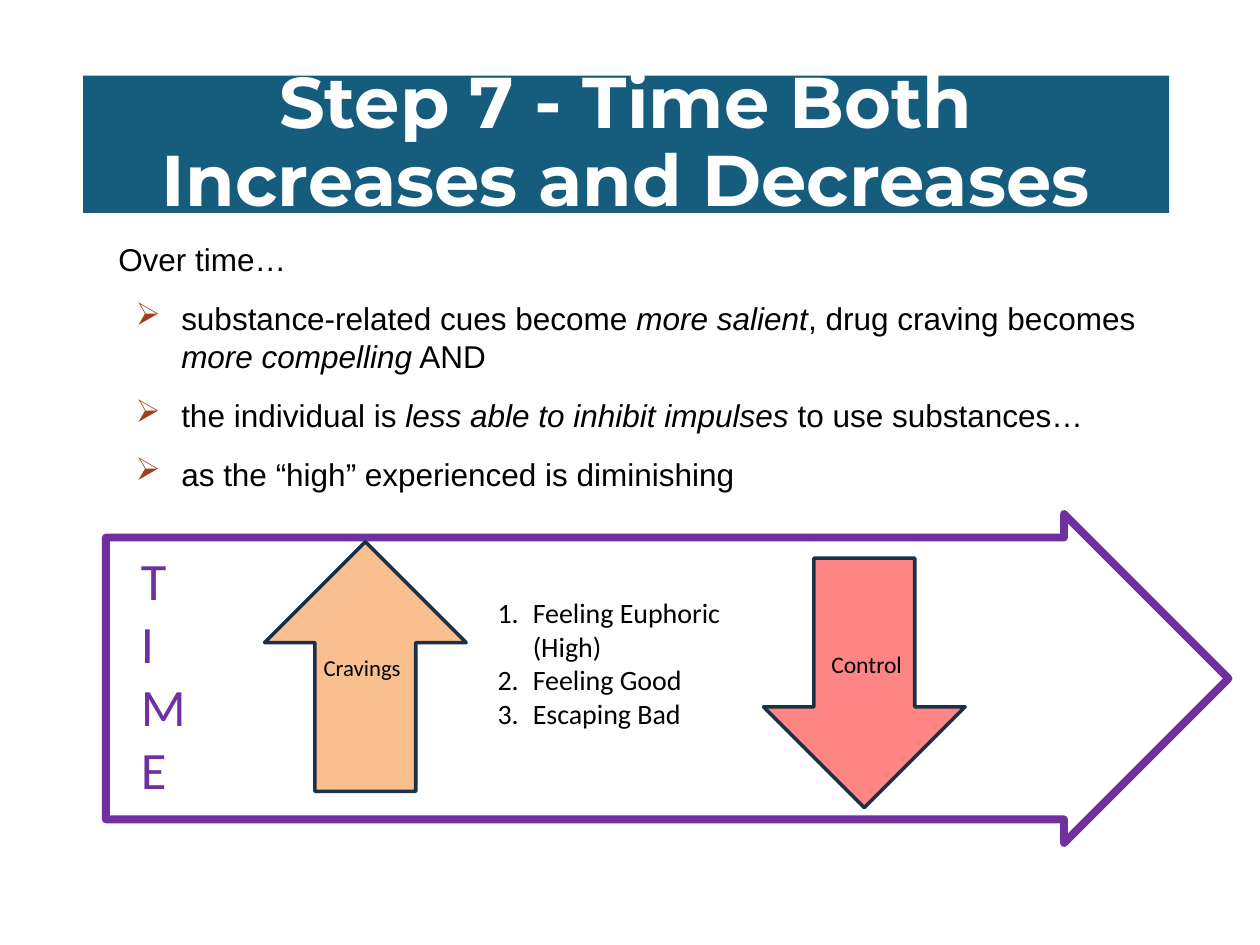
from lxml.etree import SubElement
from pptx import Presentation
from pptx.dml.color import RGBColor
from pptx.enum.shapes import MSO_SHAPE
from pptx.enum.text import MSO_ANCHOR, PP_ALIGN
from pptx.oxml.ns import qn
from pptx.util import Inches, Pt

TITLE = "Step 7 - Time Both Increases and Decreases"
INTRO = [("Over time…", False)]
POINTS = [
    [("substance-related cues become ", False), ("more salient", True),
     (", drug craving becomes ", False), ("more compelling", True), (" AND", False)],
    [("the individual is ", False), ("less able to inhibit impulses ", True),
     ("to use substances…", False)],
    [("as the “high” experienced is diminishing", False)],
]
REASONS = [[(reason, False)] for reason in
           ("Feeling Euphoric (High)", "Feeling Good", "Escaping Bad")]
TREND_SIZE = (1.6, 1.98)
TRENDS = [
    ("Cravings", (2.1, 4.3), 0, "FABF8E", (2.47, 5.14, 0.82, 0.32), 13),
    ("Control", (6.06, 4.43), 180, "FF8585", (6.5, 5.11, 0.86, 0.33), 13.5),
]
PURPLE, NAVY, TEAL, RUST = "7030A0", "193048", "165C7D", "A13F1D"
BLACK, WHITE = "000000", "FFFFFF"


def rgb(value):
    """Turn a hex string into a colour."""
    return RGBColor.from_string(value)


def add_block(slide, kind, box, fill=None, line=None, width=0):
    """Add a preset shape with a plain fill and outline."""
    block = slide.shapes.add_shape(kind, *map(Inches, box))
    block.shadow.inherit = False
    if fill:
        block.fill.solid()
        block.fill.fore_color.rgb = rgb(fill)
    else:
        block.fill.background()
    if line:
        block.line.color.rgb = rgb(line)
        block.line.width = Pt(width)
    else:
        block.line.fill.background()
    return block


def add_bullet(paragraph, indent, hanging, color, font, tag, **mark):
    """Give a paragraph a hanging bullet or number."""
    properties = paragraph._p.get_or_add_pPr()
    properties.set("marL", str(Inches(indent)))
    properties.set("indent", str(-Inches(hanging)))
    SubElement(SubElement(properties, qn("a:buClr")), qn("a:srgbClr"), val=color)
    SubElement(properties, qn("a:buFont"), typeface=font)
    SubElement(properties, qn(tag), **mark)


def write(paragraph, runs, size, font, color):
    """Fill a paragraph with runs in one font."""
    for words, italic in runs:
        run = paragraph.add_run()
        run.text = words
        if italic:
            run.font.italic = True
    paragraph.font.size = Pt(size)
    paragraph.font.name = font
    paragraph.font.color.rgb = rgb(color)


def add_text(slide, box):
    """Add a wrapping text box and return its frame."""
    frame = slide.shapes.add_textbox(*map(Inches, box)).text_frame
    frame.word_wrap = True
    return frame


def add_paragraphs(frame, count):
    """Return the given number of paragraphs of an empty frame."""
    return [frame.paragraphs[0]] + [frame.add_paragraph() for _ in range(count - 1)]


def add_title(slide):
    """Add the title band."""
    band = add_block(slide, MSO_SHAPE.RECTANGLE, (0.66, 0.6, 8.62, 1.09), TEAL)
    band.text_frame.word_wrap = True
    band.text_frame.vertical_anchor = MSO_ANCHOR.MIDDLE
    heading = band.text_frame.paragraphs[0]
    heading.alignment = PP_ALIGN.CENTER
    heading.line_spacing = 0.9
    write(heading, [(TITLE, False)], 41, "Montserrat", WHITE)
    heading.font.bold = True


def add_points(slide):
    """Add the introduction and its bulleted points."""
    frame = add_text(slide, (0.84, 1.86, 8.45, 2.34))
    entries = [INTRO] + POINTS
    for row, (paragraph, runs) in enumerate(zip(add_paragraphs(frame, len(entries)), entries)):
        if row:
            paragraph.space_before = Pt(12)
            add_bullet(paragraph, 0.5, 0.36, RUST, "Wingdings", "a:buChar", char="Ø")
        write(paragraph, runs, 18, "Arial", BLACK)


def add_timeline(slide):
    """Add the time arrow with its trends and reasons."""
    arrow = add_block(slide, MSO_SHAPE.RIGHT_ARROW, (0.84, 4.08, 8.91, 2.61), None, PURPLE, 4.5)
    arrow.adjustments[0] = 0.857
    for label, corner, turn, fill, label_box, size in TRENDS:
        trend = add_block(slide, MSO_SHAPE.UP_ARROW, corner + TREND_SIZE, fill, NAVY, 2)
        trend.rotation = turn
        caption = add_text(slide, label_box)
        write(caption.paragraphs[0], [(label, False)], size, "Calibri", BLACK)
    frame = add_text(slide, (3.85, 4.68, 2.21, 1.63))
    for paragraph, runs in zip(add_paragraphs(frame, len(REASONS)), REASONS):
        add_bullet(paragraph, 0.28, 0.28, BLACK, "Calibri", "a:buAutoNum", type="arabicPeriod")
        write(paragraph, runs, 16, "Calibri", BLACK)
    time = add_text(slide, (1.02, 4.3, 0.24, 2.12)).paragraphs[0]
    time.alignment = PP_ALIGN.CENTER
    write(time, [("TIME", False)], 30, "Calibri", PURPLE)


def main():
    """Build and save the slide."""
    deck = Presentation()
    deck.slide_width, deck.slide_height = Inches(10), Inches(7.5)
    slide = deck.slides.add_slide(deck.slide_layouts[6])
    add_title(slide)
    add_points(slide)
    add_timeline(slide)
    deck.save("out.pptx")


if __name__ == "__main__":
    main()
